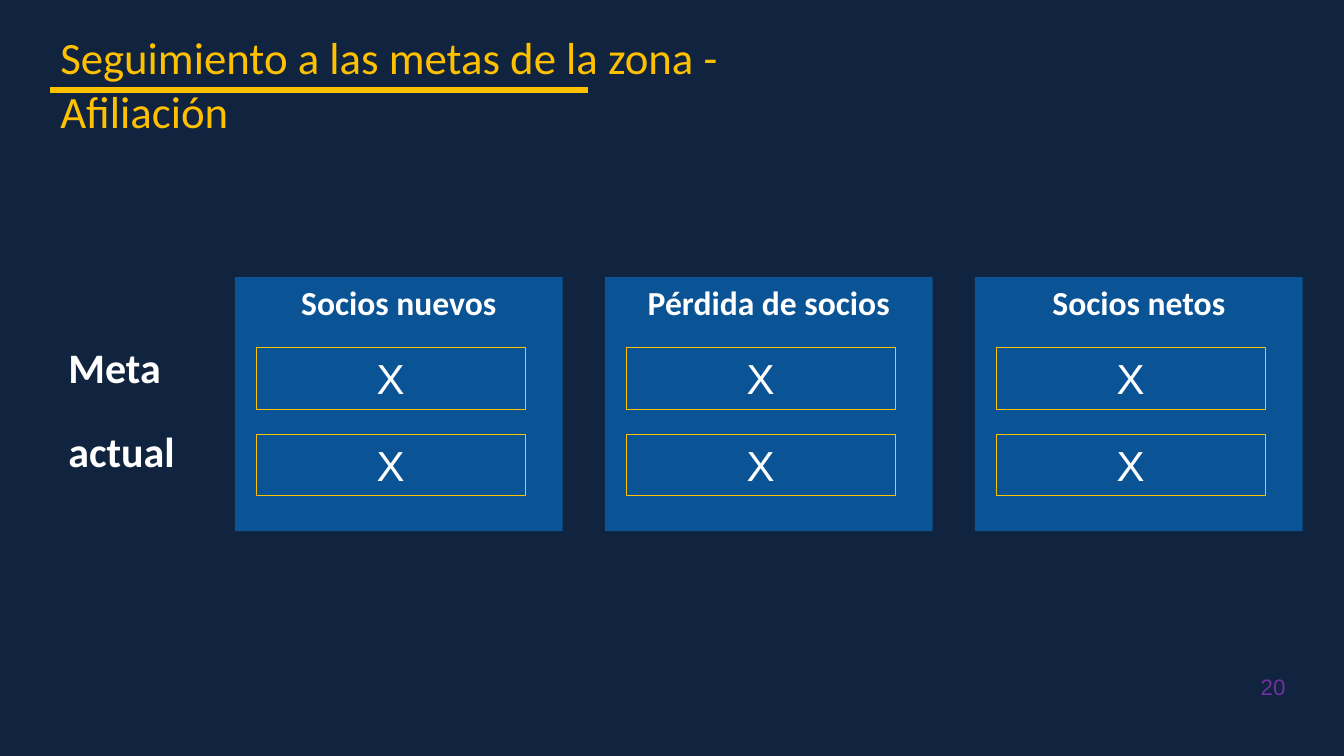
from lxml.etree import SubElement
from pptx import Presentation
from pptx.dml.color import RGBColor
from pptx.enum.shapes import MSO_CONNECTOR, MSO_SHAPE
from pptx.enum.text import MSO_ANCHOR, MSO_AUTO_SIZE, PP_ALIGN
from pptx.oxml.ns import qn
from pptx.util import Inches, Pt

NAVY = RGBColor(0x10, 0x23, 0x3F)
BLUE = RGBColor(0x0A, 0x54, 0x96)
GOLD = RGBColor(0xFF, 0xC0, 0x00)
WHITE = RGBColor(0xFF, 0xFF, 0xFF)
PURPLE = RGBColor(0x70, 0x30, 0xA0)

CARD_TITLES = ["Socios nuevos", "Pérdida de socios", "Socios netos"]
CARD_LEFT = 2.33
CARD_STEP = 3.67
CARD_TOP = 2.75
FIELD_TOPS = [3.45, 4.31]
ROW_LABELS = ["Meta", "actual"]
LABEL_TOP = 3.34
LABEL_STEP = 0.83


def write_text(shape, text, size=30, color=WHITE, font="Calibri", bold=False,
               align=PP_ALIGN.LEFT, anchor=MSO_ANCHOR.TOP):
    frame = shape.text_frame
    frame.word_wrap = True
    frame.vertical_anchor = anchor
    para = frame.paragraphs[0]
    para.alignment = align
    span = para.add_run()
    span.text = text
    span.font.size = Pt(size)
    span.font.name = font
    span.font.bold = bold
    span.font.color.rgb = color


class GoalPage:
    def __init__(self, deck):
        self.page = deck.slides.add_slide(deck.slide_layouts[6])
        background = self.page.background.fill
        background.solid()
        background.fore_color.rgb = NAVY

    def text_box(self, text, left, top, width, height, **style):
        box = self.page.shapes.add_textbox(
            Inches(left), Inches(top), Inches(width), Inches(height))
        write_text(box, text, **style)
        box.text_frame.auto_size = MSO_AUTO_SIZE.SHAPE_TO_FIT_TEXT
        return box

    def rule(self, left, right, top):
        line = self.page.shapes.add_connector(
            MSO_CONNECTOR.STRAIGHT, Inches(left), Inches(top), Inches(right), Inches(top))
        line.line.color.rgb = GOLD
        line.line.width = Pt(4.5)
        SubElement(line._element.spPr, qn("a:effectLst"))

    def rectangle(self, group, text, left, top, width, height,
                  fill=None, outline=None, **style):
        box = group.shapes.add_shape(
            MSO_SHAPE.RECTANGLE, Inches(left), Inches(top), Inches(width), Inches(height))
        box.shadow.inherit = False
        if fill is None:
            box.fill.background()
        else:
            box.fill.solid()
            box.fill.fore_color.rgb = fill
        if outline is None:
            box.line.fill.background()
        else:
            box.line.color.rgb = outline
            box.line.width = Pt(0.75)
        write_text(box, text, align=PP_ALIGN.CENTER, **style)

    def card(self, title, left):
        group = self.page.shapes.add_group_shape()
        self.rectangle(group, title, left, CARD_TOP, 3.25, 2.52,
                       fill=BLUE, size=24, bold=True)
        for top in FIELD_TOPS:
            self.rectangle(group, "X", left + 0.21, top, 2.67, 0.61,
                           outline=GOLD, font="Arial")


def main():
    deck = Presentation()
    deck.slide_width = Inches(13.33)
    deck.slide_height = Inches(7.5)
    goals = GoalPage(deck)

    number = goals.text_box("20", 12.14, 6.63, 0.61, 0.37, size=16, color=PURPLE,
                            font="Arial", align=PP_ALIGN.RIGHT, anchor=MSO_ANCHOR.MIDDLE)
    number.text_frame.margin_left = number.text_frame.margin_right = 0

    goals.text_box("Seguimiento a las metas de la zona - Afiliación",
                   0.5, 0.25, 7.67, 0.64, size=32, color=GOLD)
    goals.rule(0.5, 5.83, 0.89)

    for row, label in enumerate(ROW_LABELS):
        goals.text_box(label, 0.58, LABEL_TOP + row * LABEL_STEP, 1.75, 0.61, bold=True)
    for column, title in enumerate(CARD_TITLES):
        goals.card(title, CARD_LEFT + column * CARD_STEP)

    deck.save("out.pptx")


if __name__ == "__main__":
    main()
